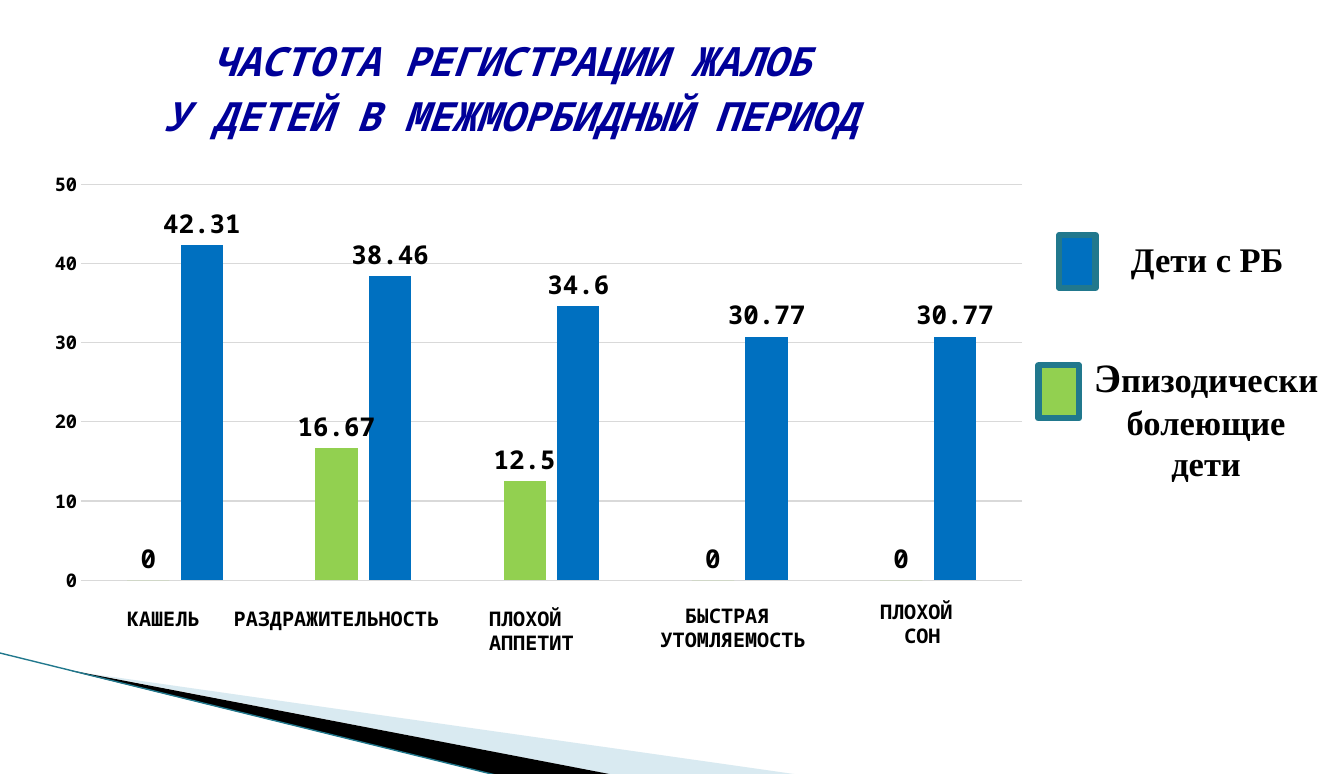
from lxml import etree
from pptx import Presentation
from pptx import util as u
from pptx.chart.data import CategoryChartData
from pptx.dml.color import RGBColor
from pptx.enum import chart as ch, shapes, text
from pptx.oxml import parse_xml
from pptx.oxml.ns import nsdecls, qn

BLACK = RGBColor(0x00, 0x00, 0x00)
NAVY = RGBColor(0x00, 0x00, 0x99)
BLUE = RGBColor(0x00, 0x70, 0xC0)
GREEN = RGBColor(0x92, 0xD0, 0x50)
TEAL = RGBColor(0x21, 0x78, 0x8D)
PALE = RGBColor(0xA0, 0xCB, 0xDC)
GRID = RGBColor(0xD9, 0xD9, 0xD9)
MONO, SERIF = "Noto Sans Mono", "Times New Roman"
LEFT, CENTER = text.PP_ALIGN.LEFT, text.PP_ALIGN.CENTER


def style(font, size, color=BLACK, name=MONO, bold=True, italic=False):
    font.size, font.name = u.Pt(size), name
    font.bold, font.italic = bold, italic
    font.color.rgb = color


def write(tf, lines, size, align=LEFT, first_size=None, **fmt):
    """One paragraph per line; first_size enlarges the initial letter."""
    for i, line in enumerate(lines):
        p = tf.paragraphs[0] if i == 0 else tf.add_paragraph()
        p.alignment = align
        parts = [(line, size)]
        if first_size and i == 0:
            parts = [(line[0], first_size), (line[1:], size)]
        for words, pts in parts:
            r = p.add_run()
            r.text = words
            style(r.font, pts, **fmt)


def manual_layout(x, y, w=None, h=None):
    tags = "" if w is None else '<c:layoutTarget val="inner"/>'
    tags += '<c:xMode val="edge"/><c:yMode val="edge"/>'
    for tag, val in zip("xywh", (x, y, w, h)):
        if val is not None:
            tags += f'<c:{tag} val="{val}"/>'
    return parse_xml(f'<c:layout {nsdecls("c")}><c:manualLayout>{tags}'
                     '</c:manualLayout></c:layout>')


class SlideBuilder:
    def __init__(self, width, height):
        self.prs = Presentation()
        self.prs.slide_width, self.prs.slide_height = u.Cm(width), u.Cm(height)
        self.s = self.prs.slides.add_slide(self.prs.slide_layouts[6])

    def polygon(self, points, color, alpha=None):
        pts = [(u.Cm(x), u.Cm(y)) for x, y in points]
        fb = self.s.shapes.build_freeform(*pts[0])
        fb.add_line_segments(pts[1:], close=True)
        sp = fb.convert_to_shape()
        sp.shadow.inherit = False
        sp.fill.solid()
        sp.fill.fore_color.rgb = color
        sp.line.fill.background()
        if alpha:
            clr = sp._element.spPr.find(qn("a:solidFill"))[0]
            etree.SubElement(clr, qn("a:alpha")).set("val", str(alpha * 1000))

    def line(self, x1, y1, x2, y2, color, width):
        sp = self.s.shapes.add_connector(
            shapes.MSO_CONNECTOR.STRAIGHT, *map(u.Cm, (x1, y1, x2, y2)))
        sp.line.color.rgb, sp.line.width = color, u.Pt(width)
        etree.SubElement(sp._element.spPr, qn("a:effectLst"))

    def swatch(self, x, y, w, h, color):
        sp = self.s.shapes.add_shape(
            shapes.MSO_SHAPE.RECTANGLE, *map(u.Cm, (x, y, w, h)))
        sp.shadow.inherit = False
        sp.fill.solid()
        sp.fill.fore_color.rgb = color
        sp.line.color.rgb, sp.line.width = TEAL, u.Pt(4.33)
        etree.SubElement(sp.line._ln, qn("a:round"))

    def label(self, x, y, w, h, lines, size, wrap=True, **fmt):
        sp = self.s.shapes.add_textbox(*map(u.Cm, (x, y, w, h)))
        tf = sp.text_frame
        tf.word_wrap = wrap
        write(tf, lines, size, **fmt)

    def column_chart(self, x, y, w, h, title, cats, series):
        data = CategoryChartData()
        data.categories = cats
        for name, vals, _ in series:
            data.add_series(name, vals)
        chart = self.s.shapes.add_chart(
            ch.XL_CHART_TYPE.COLUMN_CLUSTERED,
            *map(u.Cm, (x, y, w, h)), data).chart
        style(chart.font, 10, bold=False)
        chart.has_legend = False

        # Title and plot area
        chart.has_title = True
        write(chart.chart_title.text_frame, title, 28, align=CENTER,
              color=NAVY, italic=True)
        chart.chart_title.include_in_layout = False
        el = chart.chart_title._element
        for old in el.findall(qn("c:layout")):
            el.remove(old)
        el.find(qn("c:tx")).addnext(manual_layout(0.14, 0.03))
        area = chart._chartSpace.chart.plotArea
        for old in area.findall(qn("c:layout")):
            area.remove(old)
        area.insert(0, manual_layout(0.06, 0.233, 0.938, 0.515))

        # Axes
        chart.category_axis.visible = False
        ax = chart.value_axis
        ax.minimum_scale, ax.maximum_scale, ax.major_unit = 0, 50, 10
        ax.major_tick_mark = ax.minor_tick_mark = ch.XL_TICK_MARK.NONE
        ax.format.line.fill.background()
        ax.major_gridlines.format.line.color.rgb = GRID
        ax.major_gridlines.format.line.width = u.Pt(0.75)
        style(ax.tick_labels.font, 13)

        # Columns and their values
        plot = chart.plots[0]
        plot.gap_width, plot.overlap = 219, -27
        plot.vary_by_categories = False
        for ser, (_, _, color) in zip(plot.series, series):
            ser.format.fill.solid()
            ser.format.fill.fore_color.rgb = color
            dl = ser.data_labels
            dl.show_value = True
            dl.position = ch.XL_LABEL_POSITION.OUTSIDE_END
            style(dl.font, 18)


def main():
    b = SlideBuilder(33, 19)

    # Corner decoration
    b.polygon([(1.8, 16.48), (19.63, 19.02), (15.04, 19.02), (1.8, 16.46)],
              PALE, alpha=40)
    b.polygon([(1.75, 16.46), (15.06, 19.02), (12.27, 19.05), (1.78, 16.48)],
              BLACK)
    b.line(0, 16.03, 12.27, 19.05, TEAL, 0.95)

    # Chart
    b.column_chart(
        0.51, 0.13, 24.64, 18.87,
        ["ЧАСТОТА РЕГИСТРАЦИИ ЖАЛОБ", "У ДЕТЕЙ В МЕЖМОРБИДНЫЙ ПЕРИОД"],
        ["1", "2", "3", "4", "5"],
        [("Series 1", (0, 16.67, 12.5, 0, 0), GREEN),
         ("Series 2", (42.31, 38.46, 34.6, 30.77, 30.77), BLUE)])

    # Legend
    b.swatch(26.01, 5.77, 0.89, 1.3, BLUE)
    b.swatch(25.5, 8.97, 0.99, 1.3, GREEN)
    b.label(26.9, 5.72, 5.49, 1.27, ["Дети с РБ"], 24,
            align=CENTER, name=SERIF)
    b.label(26.3, 8.53, 6.63, 3.5, ["Эпизодически", "болеющие", "дети"], 24,
            align=CENTER, name=SERIF, first_size=28)

    # Category names
    for x, y, w, lines, align in [
            (2.87, 14.76, 2.62, ["КАШЕЛЬ"], LEFT),
            (5.49, 14.76, 6.1, ["РАЗДРАЖИТЕЛЬНОСТЬ"], LEFT),
            (11.76, 14.76, 2.84, ["ПЛОХОЙ", "АППЕТИТ"], LEFT),
            (15.67, 14.68, 4.67, ["БЫСТРАЯ ", "УТОМЛЯЕМОСТЬ"], CENTER),
            (21.23, 14.58, 2.84, ["ПЛОХОЙ ", "СОН"], CENTER)]:
        b.label(x, y, w, 0.85 + 0.6 * (len(lines) - 1), lines, 14,
                wrap=False, align=align)

    b.prs.save("out.pptx")


if __name__ == "__main__":
    main()
